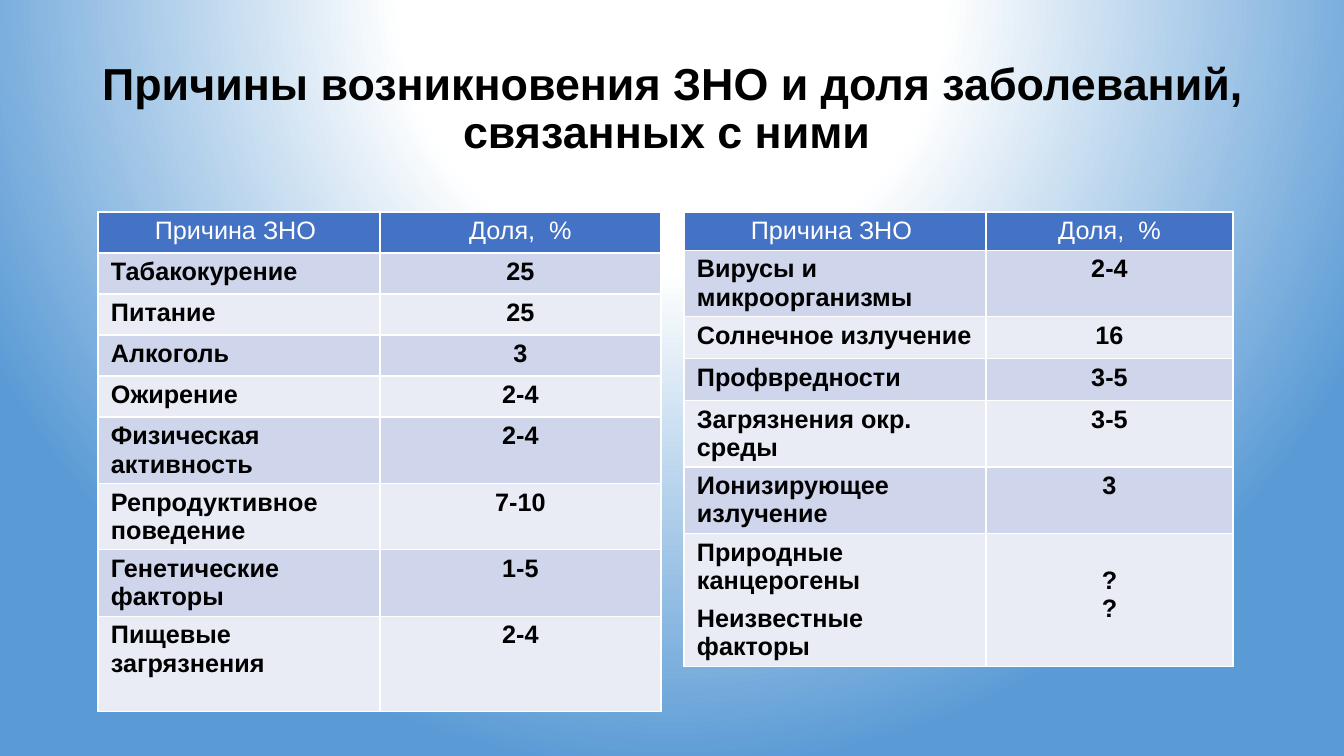
from pptx import Presentation
from pptx import util as u
from pptx.dml.color import RGBColor
from pptx.enum import text
from pptx.oxml import parse_xml
from pptx.oxml.ns import nsdecls

FONT = "Arial"
COLORS = {
    "black": "000000",
    "white": "FFFFFF",
    "header": "4472C4",
    "odd": "CFD5EA",
    "even": "E9EBF5",
    "edge": "5B9BD5",
}
TITLE = "Причины возникновения ЗНО и доля заболеваний, связанных с ними "
HEADER = ("Причина ЗНО ", "Доля,  %")
MARGIN_X, MARGIN_Y = 13, 5
UNKNOWN_SHARE_TOP = 33  # aligns the question marks below the first line
CAUSE_SPACING = 7

# Each row: cause, share, height in px
TABLES = [
    {
        "left": 98, "top": 212, "columns": (282, 281), "header_height": 41,
        "rows": [
            ("Табакокурение", "25", 41),
            ("Питание", "25", 41),
            ("Алкоголь", "3", 41),
            ("Ожирение", "2-4", 41),
            ("Физическая активность", "2-4", 66),
            ("Репродуктивное поведение", "7-10", 66),
            ("Генетические факторы", "1-5", 66),
            ("Пищевые загрязнения", "2-4", 95),
        ],
    },
    {
        "left": 684, "top": 212, "columns": (302, 247), "header_height": 38,
        "rows": [
            ("Вирусы и микроорганизмы", "2-4", 66),
            ("Солнечное излучение", "16", 42),
            ("Профвредности", "3-5", 42),
            ("Загрязнения окр. среды", "3-5", 66),
            ("Ионизирующее излучение", "3", 66),
            ("Природные канцерогены\nНеизвестные факторы", "?\n?", 133),
        ],
    },
]


def px(length):
    return u.Emu(round(length * 914400 / 100.8))


def format_paragraph(paragraph, size, color, bold, centered):
    paragraph.alignment = text.PP_ALIGN.CENTER if centered else text.PP_ALIGN.LEFT
    for run in paragraph.runs:
        run.font.name = FONT
        run.font.size = u.Pt(size)
        run.font.bold = bold
        run.font.color.rgb = RGBColor.from_string(COLORS[color])


def set_background(slide):
    stops = "".join(
        f'<a:gs pos="{position}"><a:srgbClr val="{COLORS[color]}"/></a:gs>'
        for position, color in ((0, "white"), (35000, "white"), (100000, "edge"))
    )
    slide.element.cSld.insert(0, parse_xml(
        f'<p:bg {nsdecls("p", "a")}><p:bgPr><a:gradFill rotWithShape="1">'
        f'<a:gsLst>{stops}</a:gsLst><a:path path="circle">'
        '<a:fillToRect l="50000" t="-80000" r="50000" b="180000"/></a:path>'
        '</a:gradFill><a:effectLst/></p:bgPr></p:bg>'
    ))


def add_title(slide):
    title = slide.shapes.title
    title.left, title.top, title.width, title.height = map(px, (68, 55, 1210, 110))
    frame = title.text_frame
    frame.text = TITLE
    frame.word_wrap = True
    frame.auto_size = text.MSO_AUTO_SIZE.NONE
    frame.vertical_anchor = text.MSO_ANCHOR.MIDDLE
    paragraph = frame.paragraphs[0]
    paragraph.line_spacing = 0.9
    format_paragraph(paragraph, 32, "black", True, True)


def fill_cell(cell, content, is_header, is_share, fill):
    cell.fill.solid()
    cell.fill.fore_color.rgb = RGBColor.from_string(COLORS[fill])
    cell.margin_left = cell.margin_right = px(MARGIN_X)
    cell.margin_bottom = px(MARGIN_Y)
    cell.margin_top = px(UNKNOWN_SHARE_TOP if content.startswith("?") else MARGIN_Y)
    cell.text_frame.text = content
    for index, paragraph in enumerate(cell.text_frame.paragraphs):
        if index and not is_share:
            paragraph.space_before = u.Pt(CAUSE_SPACING)
        color = "white" if is_header else "black"
        format_paragraph(paragraph, 18, color, not is_header, is_header or is_share)


def add_causes_table(slide, spec_table):
    rows = [(*HEADER, spec_table["header_height"]), *spec_table["rows"]]
    columns = spec_table["columns"]
    height = sum(row[-1] for row in rows)
    table = slide.shapes.add_table(
        len(rows), len(columns), px(spec_table["left"]), px(spec_table["top"]),
        px(sum(columns)), px(height),
    ).table
    for column, width in zip(table.columns, columns):
        column.width = px(width)
    for row_index, (cause, share, row_height) in enumerate(rows):
        table.rows[row_index].height = px(row_height)
        is_header = row_index == 0
        fill = "header" if is_header else ("even", "odd")[row_index % 2]
        for column_index, content in enumerate((cause, share)):
            fill_cell(table.cell(row_index, column_index), content,
                      is_header, column_index == 1, fill)


def main():
    presentation = Presentation()
    presentation.slide_width, presentation.slide_height = px(1344), px(756)
    slide = presentation.slides.add_slide(presentation.slide_layouts[5])
    set_background(slide)
    add_title(slide)
    for causes in TABLES:
        add_causes_table(slide, causes)
    presentation.save("out.pptx")


if __name__ == "__main__":
    main()
